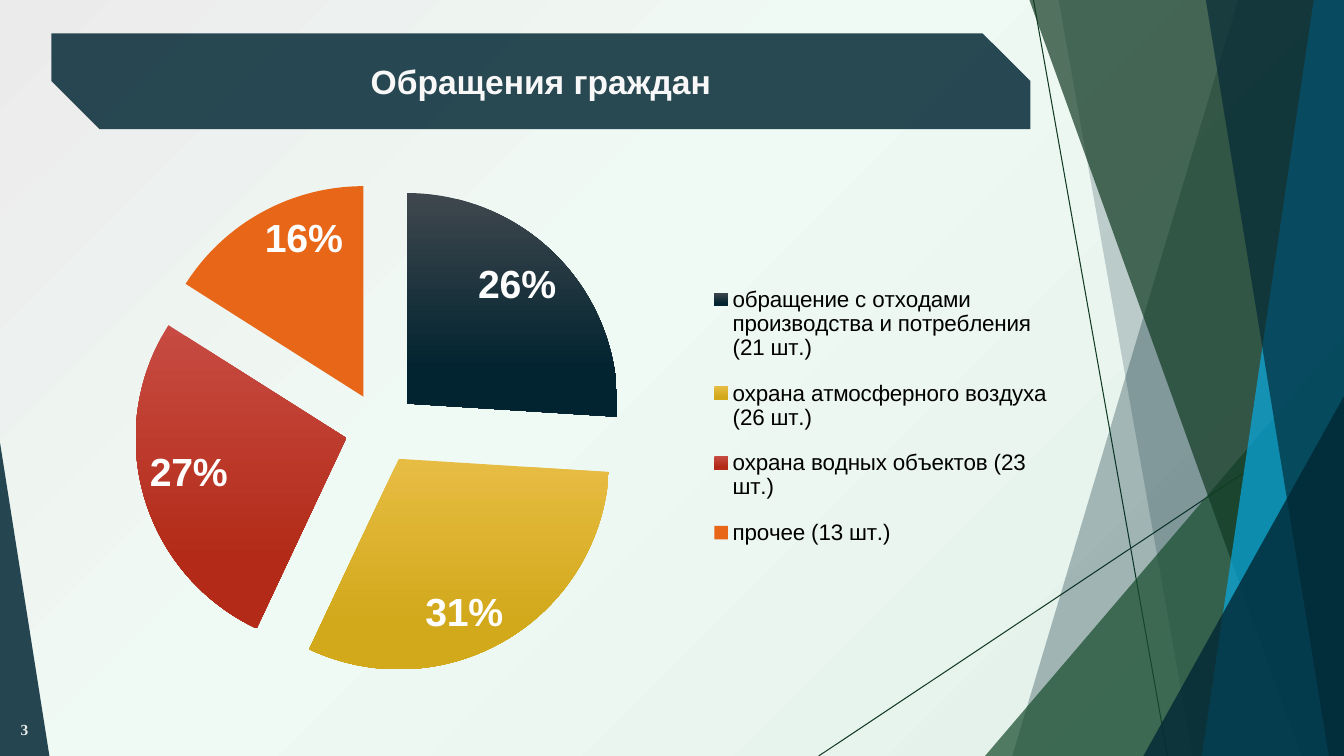
"""Build the slide on citizens' appeals: an exploded pie beside layered facets."""
from lxml import etree
from pptx import Presentation
from pptx import util as u
from pptx.chart.data import CategoryChartData
from pptx.dml.color import RGBColor
from pptx.enum import chart as ch, shapes, text
from pptx.oxml import parse_xml
from pptx.oxml.ns import nsdecls, qn

TITLE = "Обращения граждан"
NUMBER = "3"
SLICES = [
    ("обращение с отходами производства и потребления (21 шт.)", 26, ("3F474E", "022430")),
    ("охрана атмосферного воздуха (26 шт.)", 31, ("E7BC43", "D2A91B")),
    ("охрана водных объектов (23 шт.)", 27, ("C74B42", "B32B18")),
    ("прочее (13 шт.)", 16, ("E76618",)),
]
THEME = {
    "navy": "022734", "green": "113A22", "leaf": "174D2D", "sky": "09ABE4",
    "bg": [(0, "E1EFE9"), (58, "F0FAF4"), (100, "EBEBEB")],
    "title": {"size": 24, "name": "Arial", "bold": True, "color": "F8F8F8"},
    "number": {"size": 11, "name": "Times New Roman", "bold": True, "color": "EBEBEB"},
    "chart": {"size": 10, "name": "Lato", "color": "000000"},
    "legend": {"size": 16, "name": "Arial", "color": "000000"},
    "label": {"size": 28, "name": "Arial", "bold": True, "color": "FEFEFE"},
}
W, H = 13.33, 7.5
LINES = [((10.25, 0), (11.58, H)), ((W, 4.03), (8.12, H))]
FACETS = [
    ("band", (12.28, 10.04), "navy", 30),
    ("band", (10.5, 11.83), "navy", 20),
    ("triangle", (9.77, 3.33, 3.56, 4.17, 1), "leaf", 72),
    ("band", (10.21, 12.91), "green", 70),
    ("band", (13.03, 11.92), "sky", 70),
    ("band", (11.96, 13.18), "navy", 65),
    ("triangle", (11.34, 3.93, 1.99, 3.57, 1), "navy", 80),
    ("triangle", (0, 4.39, 0.49, 3.11, 0), "navy", 85),
]
TITLE_BOX = (0.51, 0.33, 9.71, 0.95)
NUMBER_BOX = (-0.37, 7.04, 0.75, 0.4)
CHART_BOX = (0, 0.85, 11.27, 5.96)
PLOT = (0.05, 0.16, 0.57, 0.82)
LEGEND = (0.62, 0.3, 0.31, 0.5)
EXPLOSION = 17


def inches(values):
    return [u.Inches(v) for v in values]


def set_font(font, style):
    for key, value in style.items():
        if key == "color":
            font.color.rgb = RGBColor.from_string(value)
        else:
            setattr(font, key, u.Pt(value) if key == "size" else value)


def paint(sp, color, opacity):
    sp.shadow.inherit = False
    sp.line.fill.background()
    sp.fill.solid()
    sp.fill.fore_color.rgb = RGBColor.from_string(THEME[color])
    rgb = next(sp._element.spPr.iter(qn("a:srgbClr")))
    etree.SubElement(rgb, qn("a:alpha"), val=str(opacity * 1000))


def write(sp, content, style, align):
    tf = sp.text_frame
    tf.word_wrap = True
    tf.vertical_anchor = text.MSO_ANCHOR.MIDDLE
    p = tf.paragraphs[0]
    p.alignment = align
    r = p.add_run()
    r.text = content
    set_font(r.font, THEME[style])


def add_background(s):
    s.background.fill.solid()
    stops = "".join(f'<a:gs pos="{pos * 1000}"><a:srgbClr val="{c}"/></a:gs>' for pos, c in THEME["bg"])
    grad = parse_xml(
        f'<a:gradFill {nsdecls("a")} rotWithShape="1"><a:gsLst>{stops}</a:gsLst>'
        '<a:path path="circle"><a:fillToRect l="100000" t="100000"/></a:path></a:gradFill>')
    solid = next(s._element.iter(qn("a:solidFill")))
    solid.getparent().replace(solid, grad)


def add_line(s, start, end):
    cn = s.shapes.add_connector(shapes.MSO_CONNECTOR.STRAIGHT, *inches(start + end))
    cn.line.color.rgb = RGBColor.from_string(THEME["green"])
    cn.line.width = u.Pt(0.75)
    etree.SubElement(cn._element.spPr, qn("a:effectLst"))


def add_facet(s, kind, geometry, color, opacity):
    if kind == "band":
        top, bottom = geometry
        fb = s.shapes.build_freeform(u.Inches(top), 0)
        fb.add_line_segments([inches(pt) for pt in ((W, 0), (W, H), (bottom, H))], close=True)
        sp = fb.convert_to_shape()
    else:
        *box, apex = geometry
        sp = s.shapes.add_shape(shapes.MSO_SHAPE.ISOSCELES_TRIANGLE, *inches(box))
        sp.adjustments[0] = apex
    paint(sp, color, opacity)


def layout(box, inner=False):
    target = '<c:layoutTarget val="inner"/>' if inner else ""
    modes = "".join(f'<c:{k}Mode val="edge"/>' for k in "xy")
    sizes = "".join(f'<c:{k} val="{v}"/>' for k, v in zip("xywh", box))
    return parse_xml(f'<c:layout {nsdecls("c")}><c:manualLayout>{target}{modes}{sizes}'
                     '</c:manualLayout></c:layout>')


def color_slice(fill, colors):
    if len(colors) == 1:
        fill.solid()
        fill.fore_color.rgb = RGBColor.from_string(colors[0])
        return
    fill.gradient()
    fill.gradient_angle = 270
    for stop, color, pos in zip(fill.gradient_stops, colors, (0, 0.78)):
        stop.color.rgb = RGBColor.from_string(color)
        stop.position = pos


def add_pie(s):
    data = CategoryChartData()
    data.categories = [name for name, _, _ in SLICES]
    data.add_series("Series 1", [value for _, value, _ in SLICES])
    chart = s.shapes.add_chart(ch.XL_CHART_TYPE.PIE, *inches(CHART_BOX), data).chart
    chart.has_title = False
    set_font(chart.font, THEME["chart"])

    chart.has_legend = True
    legend = chart.legend
    legend.position = ch.XL_LEGEND_POSITION.RIGHT
    legend.include_in_layout = False
    set_font(legend.font, THEME["legend"])
    for root, box in ((legend._element, LEGEND), (chart._chartSpace.chart.plotArea, PLOT)):
        for old in root.findall(qn("c:layout")):
            root.remove(old)
        root.insert(1 if box is LEGEND else 0, layout(box, box is PLOT))

    plot = chart.plots[0]
    plot.vary_by_categories = True
    series = plot.series[0]
    for i, (_, _, colors) in enumerate(SLICES):
        color_slice(series.points[i].format.fill, colors)
    explosion = parse_xml(f'<c:explosion {nsdecls("c")} val="{EXPLOSION}"/>')
    series._element.find(qn("c:dPt")).addprevious(explosion)
    for point in series._element.findall(qn("c:dPt")):
        point.find(qn("c:spPr")).addprevious(
            parse_xml(f'<c:explosion {nsdecls("c")} val="{EXPLOSION}"/>'))

    plot.has_data_labels = True
    labels = plot.data_labels
    labels.show_percentage, labels.show_value = True, False
    labels.number_format, labels.number_format_is_linked = "0%", False
    labels.position = ch.XL_LABEL_POSITION.INSIDE_END
    set_font(labels.font, THEME["label"])


def main():
    prs = Presentation()
    prs.slide_width, prs.slide_height = inches((W, H))
    s = prs.slides.add_slide(prs.slide_layouts[6])
    add_background(s)
    for start, end in LINES:
        add_line(s, start, end)
    for facet in FACETS:
        add_facet(s, *facet)
    banner = s.shapes.add_shape(shapes.MSO_SHAPE.SNIP_2_DIAG_RECTANGLE, *inches(TITLE_BOX))
    banner.adjustments[0], banner.adjustments[1] = 0, 0.5
    paint(banner, "navy", 84)
    write(banner, TITLE, "title", text.PP_ALIGN.CENTER)
    write(s.shapes.add_textbox(*inches(NUMBER_BOX)), NUMBER, "number", text.PP_ALIGN.RIGHT)
    add_pie(s)
    prs.save("out.pptx")


if __name__ == "__main__":
    main()
